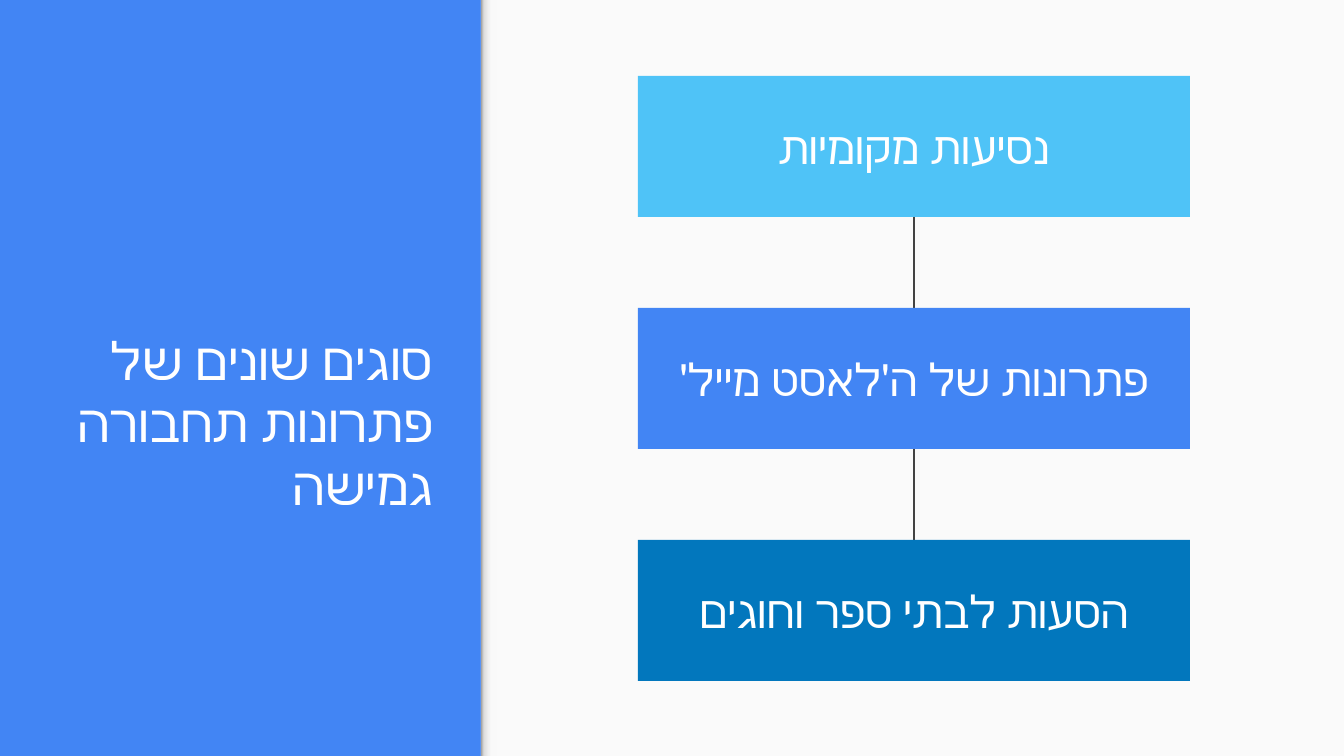
"""Build a slide naming three kinds of flexible transport."""
from copy import deepcopy
from lxml import etree
from pptx import Presentation, util as u
from pptx.dml.color import RGBColor
from pptx.enum import shapes, text
from pptx.oxml.ns import qn

HUES = {"blue": "4285F4", "sky": "4FC3F7", "deep": "0277BD", "pale": "FAFAFA",
        "line": "424242", "white": "FFFFFF"}
TITLE = "סוגים שונים של פתרונות תחבורה גמישה"
KINDS = [("נסיעות מקומיות", "sky"),
         ("פתרונות של ה׳לאסט מייל׳", "blue"),
         ("הסעות לבתי ספר וחוגים", "deep")]
SHADE = [(0, "999999"), (0.2, "DEDEDE"), (0.64, "F9F9F9")]
WIDE, HIGH, SPLIT, EDGE = 1344, 756, 481, 16
LEFT, TOP, BOX_W, BOX_H, STEP = 638, 76, 552, 141, 232
INSET = 13


def px(*nums):
    return [round(n * 914400 / 134.4) for n in nums]


def rect(slide, *area):
    box = slide.shapes.add_shape(shapes.MSO_SHAPE.RECTANGLE, *px(*area))
    box.shadow.inherit = False
    box.line.fill.background()
    return box


def paint(box, hue):
    box.fill.solid()
    box.fill.fore_color.rgb = RGBColor.from_string(HUES[hue])


def write(box, words, size, align, anchor):
    frame = box.text_frame
    frame.word_wrap = True
    frame.vertical_anchor = anchor
    for side in ("left", "right", "top", "bottom"):
        setattr(frame, "margin_" + side, px(INSET)[0])
    para = frame.paragraphs[0]
    para.alignment = align
    para._p.get_or_add_pPr().set("rtl", "1")
    run = para.add_run()
    run.text = words
    run.font.size = u.Pt(size)
    run.font.name = "Roboto"
    run.font.color.rgb = RGBColor.from_string(HUES["white"])
    etree.SubElement(run.font._element, qn("a:cs")).set("typeface", "Roboto")


def shade(box):
    box.fill.gradient()
    box.fill.gradient_angle = 0
    stops = box._element.spPr.find(qn("a:gradFill")).find(qn("a:gsLst"))
    stops.append(deepcopy(stops[0]))
    for stop, (place, hue) in zip(box.fill.gradient_stops, SHADE):
        stop.color.rgb = RGBColor.from_string(hue)
        stop.position = place


def link(slide, x, top, end):
    wire = slide.shapes.add_connector(shapes.MSO_CONNECTOR.STRAIGHT, *px(x, top, x, end))
    wire.line.color.rgb = RGBColor.from_string(HUES["line"])
    wire.line.width = u.Pt(0.75)
    etree.SubElement(wire._element.spPr, qn("a:effectLst"))


def main():
    deck = Presentation()
    deck.slide_width, deck.slide_height = px(WIDE, HIGH)
    slide = deck.slides.add_slide(deck.slide_layouts[6])
    paint(slide.background, "blue")
    paint(rect(slide, SPLIT, 0, WIDE - SPLIT, HIGH), "pale")
    shade(rect(slide, SPLIT, 0, EDGE, HIGH))
    title = slide.shapes.add_textbox(*px(32, 52, 414, 477))
    write(title, TITLE, 28, text.PP_ALIGN.RIGHT, text.MSO_ANCHOR.BOTTOM)
    for i, (words, hue) in enumerate(KINDS):
        top = TOP + i * STEP
        if i:
            link(slide, LEFT + BOX_W / 2, top - STEP + BOX_H, top)
        box = rect(slide, LEFT, top, BOX_W, BOX_H)
        paint(box, hue)
        write(box, words, 24, text.PP_ALIGN.CENTER, text.MSO_ANCHOR.MIDDLE)
    deck.save("out.pptx")


if __name__ == "__main__":
    main()
